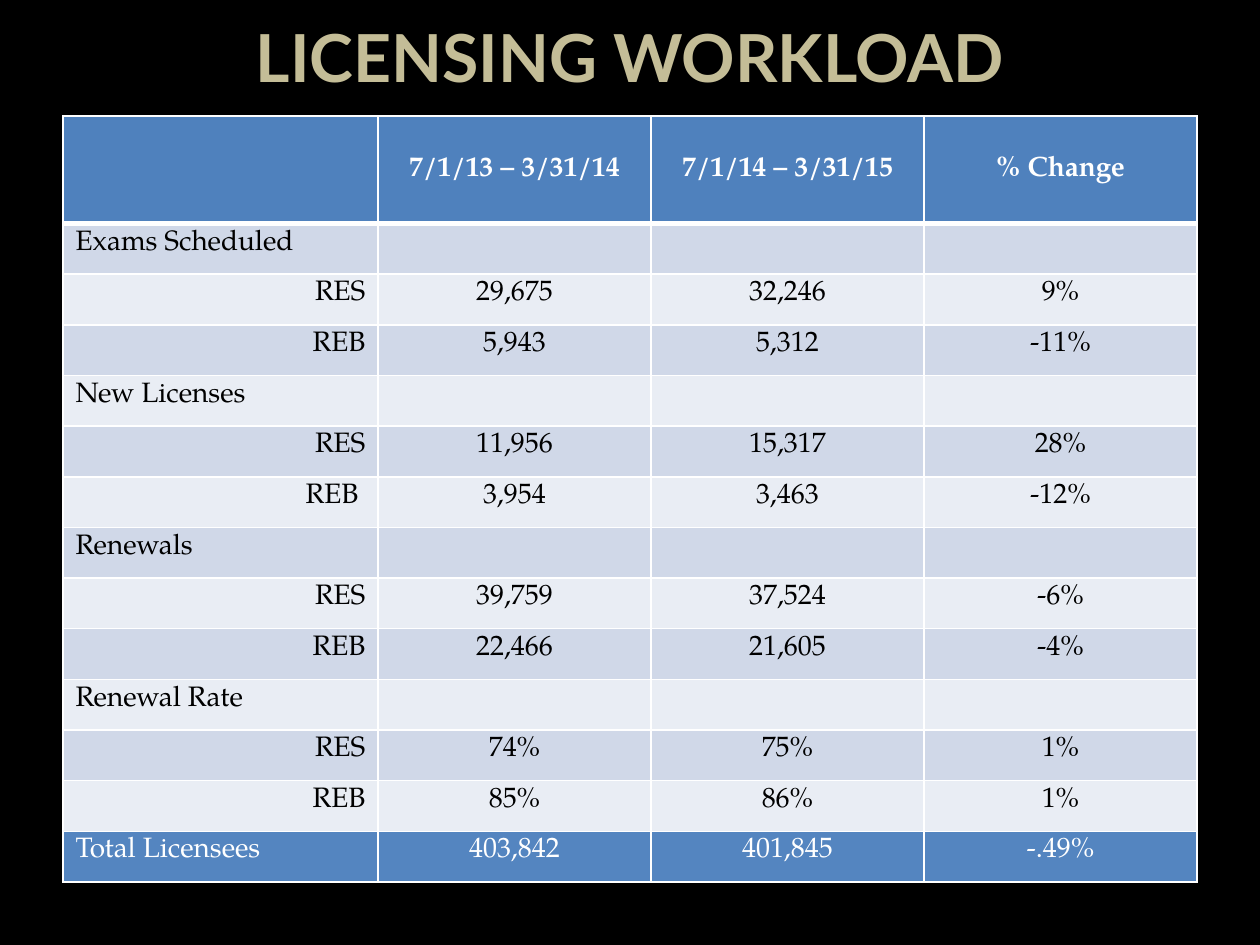
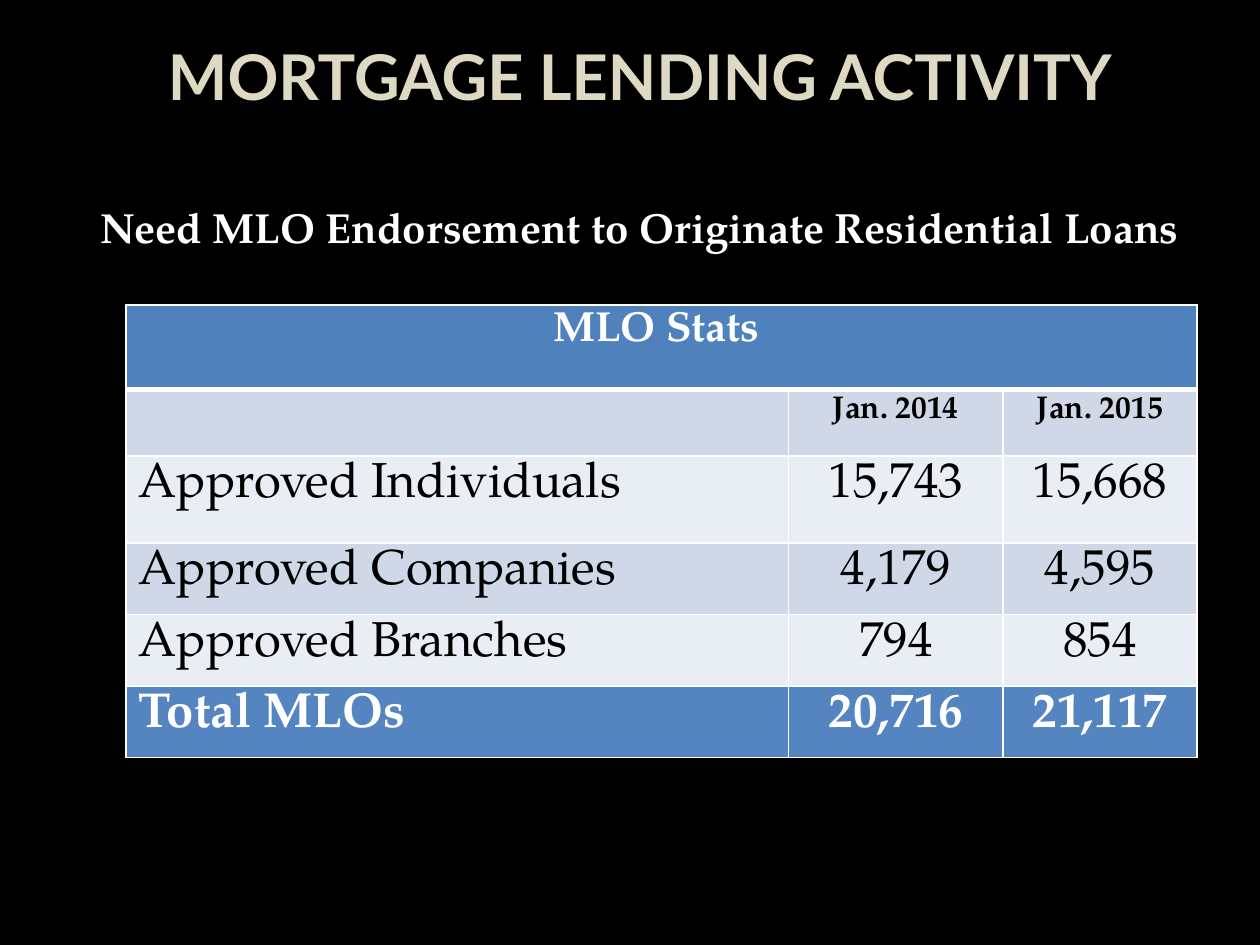
import dataclasses

import lxml.etree
import pptx
import pptx.dml.color
import pptx.enum.text
import pptx.oxml.ns
import pptx.util

ALIGN = pptx.enum.text.PP_ALIGN

LICENSING = {
    "title": ("LICENSING WORKLOAD", (5, 1.73, 90, 15.6), 37.8, "C4BD97"),
    "area": (5, 12.27, 90, 81.07),
    "columns": [7.5, 6.5, 6.5, 6.5],
    "heights": [0.85] + [0.4] * 13,
    "styles": ["head"] + ["body"] * 12 + ["total"],
    "rows": [
        ("", "7/1/13 – 3/31/14", "7/1/14 – 3/31/15", "% Change"),
        ("Exams Scheduled", "", "", ""),
        ("RES", "29,675", "32,246", "9%"),
        ("REB", "5,943", "5,312", "-11%"),
        ("New Licenses", "", "", ""),
        ("RES", "11,956", "15,317", "28%"),
        ("REB ", "3,954", "3,463", "-12%"),
        ("Renewals", "", "", ""),
        ("RES", "39,759", "37,524", "-6%"),
        ("REB", "22,466", "21,605", "-4%"),
        ("Renewal Rate", "", "", ""),
        ("RES", "74%", "75%", "1%"),
        ("REB", "85%", "86%", "1%"),
        ("Total Licensees", "403,842", "401,845", "-.49%"),
    ],
}

MORTGAGE = {
    "title": ("MORTGAGE LENDING ACTIVITY", (5.8, 4, 90, 8.27), 36, "DDD9C3"),
    "message": "Need MLO Endorsement to Originate Residential Loans",
    "message_area": (0, 13.33, 100, 84.4),
    "area": (10, 32.27, 85, 46.4),
    "columns": [5.26, 1.7, 1.54],
    "heights": [0.67, 0.53, 0.69, 0.53, 0.53, 0.53],
    "styles": ["banner", "dates", "figures", "figures", "figures", "sum"],
    "rows": [
        ("MLO Stats ", "", ""),
        ("", "Jan. 2014", "Jan. 2015"),
        ("Approved Individuals", "15,743", "15,668"),
        ("Approved Companies", "4,179", "4,595"),
        ("Approved Branches", "794", "854"),
        ("Total MLOs", "20,716", "21,117"),
    ],
}


@dataclasses.dataclass(frozen=True)
class Theme:
    width: float = 10
    height: float = 7.5
    background: str = "000000"
    title_font: str = "Lato"
    text_font: str = "TeX Gyre Pagella"
    light: str = "FFFFFF"
    dark: str = "000000"
    header: str = "4F81BD"
    total: str = "5485C0"
    bands: tuple = ("E9EDF4", "D0D8E8")
    message_size: int = 24
    thin: int = 1
    thick: int = 3


THEME = Theme()
ROW_STYLES = {
    "head": (16, True, THEME.light, THEME.header),
    "body": (16, False, THEME.dark, None),
    "total": (16, False, THEME.light, THEME.total),
    "banner": (24, True, THEME.light, THEME.header),
    "dates": (18, True, THEME.dark, None),
    "figures": (28, False, THEME.dark, None),
    "sum": (28, True, THEME.light, THEME.total),
}


def color(value):
    return pptx.dml.color.RGBColor.from_string(value)


def place(area):
    sides = (THEME.width, THEME.height) * 2
    return [pptx.util.Inches(share * side / 100) for share, side in zip(area, sides)]


def write(para, text, font, size, tint, bold, align):
    para.alignment = align
    span = para.add_run()
    span.text = text
    span.font.name = font
    span.font.size = pptx.util.Pt(size)
    span.font.bold = bold
    span.font.color.rgb = color(tint)


def add_text(page, area, insets, *style):
    box = page.shapes.add_textbox(*place(area))
    frame = box.text_frame
    frame.word_wrap = True
    frame.margin_left, frame.margin_top, frame.margin_right, frame.margin_bottom = (
        pptx.util.Inches(inset) for inset in insets)
    write(frame.paragraphs[0], *style, True, ALIGN.CENTER)


def add_page(deck, title):
    page = deck.slides.add_slide(deck.slide_layouts[6])
    page.background.fill.solid()
    page.background.fill.fore_color.rgb = color(THEME.background)
    text, area, size, tint = title
    add_text(page, area, (0.1, 0, 0.1, 0), text, THEME.title_font, size, tint)
    return page


def draw_borders(cell, row):
    properties = cell._tc.get_or_add_tcPr()
    heavy = {0: "B", 1: "T"}.get(row)
    for side in "LRTB":
        weight = THEME.thick if side == heavy else THEME.thin
        line = lxml.etree.SubElement(
            properties, pptx.oxml.ns.qn("a:ln" + side), w=str(pptx.util.Pt(weight)))
        fill = lxml.etree.SubElement(line, pptx.oxml.ns.qn("a:solidFill"))
        lxml.etree.SubElement(fill, pptx.oxml.ns.qn("a:srgbClr"), val=THEME.light)


def cell_align(text, column):
    if column or text.startswith("MLO"):
        return ALIGN.CENTER
    return ALIGN.RIGHT if text.strip() in ("RES", "REB") else ALIGN.LEFT


def add_stats(page, content):
    rows, columns, heights = content["rows"], content["columns"], content["heights"]
    left, top, width, height = place(content["area"])
    table = page.shapes.add_table(len(rows), len(columns), left, top, width, height).table
    for column, share in zip(table.columns, columns):
        column.width = int(width * share / sum(columns))
    for row, share in zip(table.rows, heights):
        row.height = int(height * share / sum(heights))
    for r, (texts, style) in enumerate(zip(rows, content["styles"])):
        size, bold, tint, fill = ROW_STYLES[style]
        for c, text in enumerate(texts):
            cell = table.cell(r, c)
            draw_borders(cell, r)
            cell.fill.solid()
            cell.fill.fore_color.rgb = color(fill or THEME.bands[r % 2])
            if style == "head":
                cell.vertical_anchor = pptx.enum.text.MSO_ANCHOR.MIDDLE
            if text:
                write(cell.text_frame.paragraphs[0], text, THEME.text_font,
                      size, tint, bold, cell_align(text, c))
            else:
                cell.margin_top = cell.margin_bottom = 0
        if style == "banner":
            table.cell(r, 0).merge(table.cell(r, len(columns) - 1))


def main():
    deck = pptx.Presentation()
    deck.slide_width = pptx.util.Inches(THEME.width)
    deck.slide_height = pptx.util.Inches(THEME.height)
    for content in (LICENSING, MORTGAGE):
        page = add_page(deck, content["title"])
        if "message" in content:
            add_text(page, content["message_area"], (0.25, 0.6, 0.1, 0.05),
                     content["message"], THEME.text_font, THEME.message_size, THEME.light)
        add_stats(page, content)
    deck.save("out.pptx")


if __name__ == "__main__":
    main()
